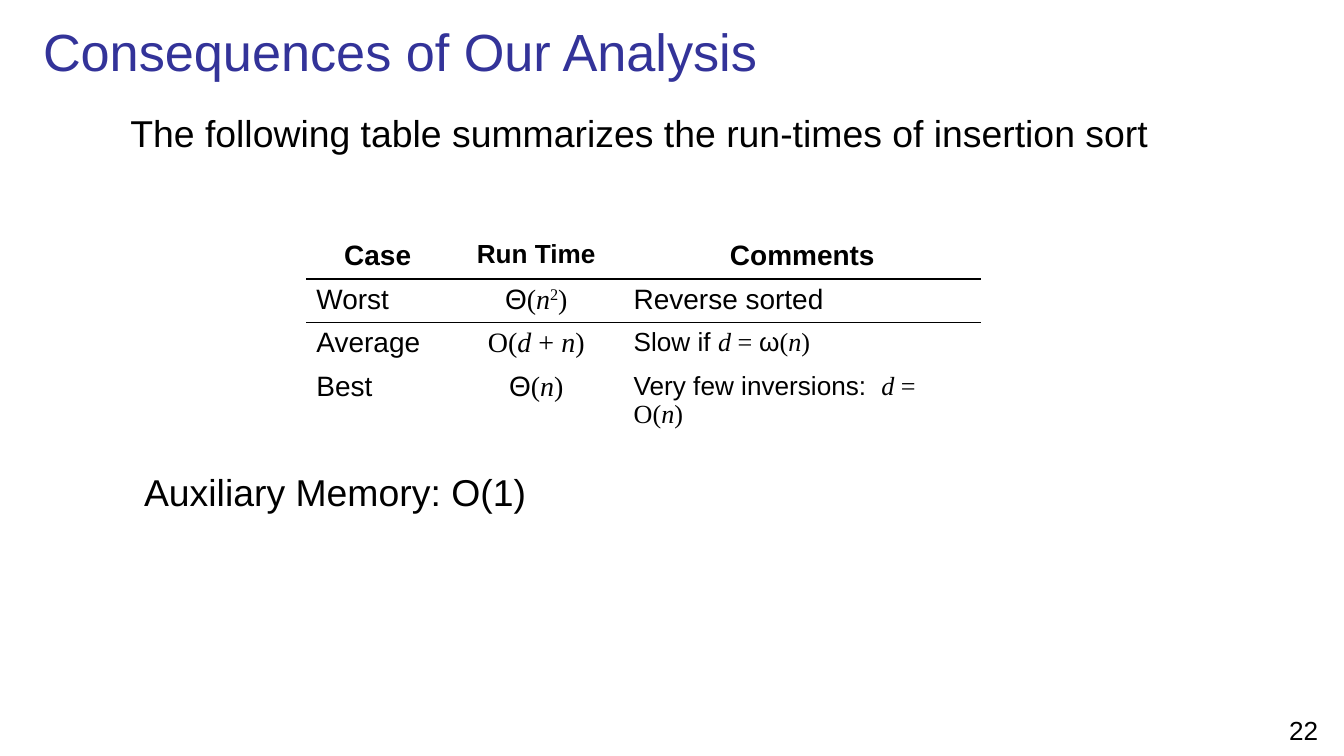
from pptx import Presentation
from pptx import util as u
from pptx.dml.color import RGBColor
from pptx.enum import text
from pptx.oxml import parse_xml
from pptx.oxml.ns import nsdecls, qn

BLACK, BLUE = "000000", "333399"
SANS, SERIF = "Arial", "Times New Roman"
LEFT, CENTER = text.PP_ALIGN.LEFT, text.PP_ALIGN.CENTER
NO_GRID = "{2D5ABB26-0587-4C30-8999-92F81FD0307C}"


def rgb(value):
    return RGBColor.from_string(value)


def math(value):
    return value, "math"


def var(value):
    return value, "var"


def sup(value):
    return value, "sup"


class Deck:
    def __init__(self, prs):
        self.s = prs.slides.add_slide(prs.slide_layouts[5])

    def style(self, p, size, color=BLACK, bold=False, align=LEFT):
        p.alignment = align
        p.font.name, p.font.size, p.font.bold = SANS, u.Pt(size), bold
        p.font.color.rgb = rgb(color)

    def title(self, words, box):
        sp = self.s.shapes.title
        sp.left, sp.top, sp.width, sp.height = map(u.Inches, box)
        tf = sp.text_frame
        tf.text = words
        tf.auto_size = text.MSO_AUTO_SIZE.NONE
        tf.vertical_anchor = text.MSO_ANCHOR.MIDDLE
        self.style(tf.paragraphs[0], 28, BLUE)

    def text_box(self, words, box, size=20, align=LEFT, wrap=True, before=0, indent=0.1):
        tf = self.s.shapes.add_textbox(*map(u.Inches, box)).text_frame
        tf.text, tf.word_wrap = words, wrap
        tf.margin_left = u.Inches(indent)
        p = tf.paragraphs[0]
        self.style(p, size, align=align)
        p.space_before = u.Pt(before)

    def cell(self, cell, parts, size, bold, align):
        cell.fill.background()
        cell.margin_left = cell.margin_right = u.Pt(5.4)
        cell.margin_top = cell.margin_bottom = u.Pt(2.7)
        p = cell.text_frame.paragraphs[0]
        self.style(p, size, bold=bold, align=align)
        for part in parts:
            words, kind = part if isinstance(part, tuple) else (part, "plain")
            r = p.add_run()
            r.text = words
            r.font.name = SANS if kind == "plain" else SERIF
            r.font.size, r.font.bold = u.Pt(size), bold
            r.font.italic = kind == "var"
            r.font.color.rgb = rgb(BLACK)
            if kind == "sup":
                r.font._element.set("baseline", "30000")

    def border(self, cell, side):
        # Borders come before the fill in the cell properties
        cell._tc.get_or_add_tcPr().insert(0, parse_xml(
            f'<a:{side} {nsdecls("a")} w="12700"><a:solidFill>'
            f'<a:srgbClr val="{BLACK}"/></a:solidFill></a:{side}>'))

    def table(self, rows, box, widths, row_height):
        tbl = self.s.shapes.add_table(len(rows), len(widths), *map(u.Inches, box)).table
        tbl.first_row = tbl.horz_banding = False
        tbl._tbl.tblPr.find(qn("a:tableStyleId")).text = NO_GRID
        for column, width in zip(tbl.columns, widths):
            column.width = u.Inches(width)
        for i, row in enumerate(rows):
            tbl.rows[i].height = u.Inches(row_height)
            for j, (size, *parts) in enumerate(row):
                cell = tbl.cell(i, j)
                align = CENTER if i == 0 or j == 1 else LEFT
                self.cell(cell, parts, size, i == 0, align)
                if i < 2:
                    self.border(cell, ("lnB", "lnT")[i])


def main():
    # Widescreen, 16:9
    prs = Presentation()
    prs.slide_width = u.Inches(10)
    prs.slide_height = u.Inches(10 * 9 / 16)
    deck = Deck(prs)

    # Page number and heading
    deck.text_box("22", (9.4, 5.27, 0.6, 0.3), size=14, align=CENTER)
    deck.title("Consequences of Our Analysis", (0.22, 0.08, 9.74, 0.59))
    deck.text_box("The following table summarizes the run-times of insertion sort",
                  (0.44, 0.77, 9.16, 4.38), before=2, indent=0.53)

    # Run times: each cell is a font size followed by its parts
    rows = [
        [(15, "Case"), (14, "Run Time"), (15, "Comments")],
        [(15, "Worst"),
         (15, "Θ", math("("), var("n"), sup("2"), math(")")),
         (15, "Reverse sorted")],
        [(15, "Average"),
         (15, math("O("), var("d"), math(" + "), var("n"), math(")")),
         (14, "Slow if ", var("d"), math(" = "), "ω", math("("), var("n"), math(")"))],
        [(15, "Best"),
         (15, "Θ", math("("), var("n"), math(")")),
         (14, "Very few inversions:  ", var("d"), math(" = O("), var("n"), math(")"))],
    ]
    deck.table(rows, (2.28, 1.75, 5.02, 1.3), (1.06, 1.3, 2.66), 0.32)

    # Memory note
    deck.text_box("Auxiliary Memory: O(1)", (0.96, 3.44, 3.07, 0.44),
                  align=CENTER, wrap=False)

    prs.save("out.pptx")


if __name__ == "__main__":
    main()
